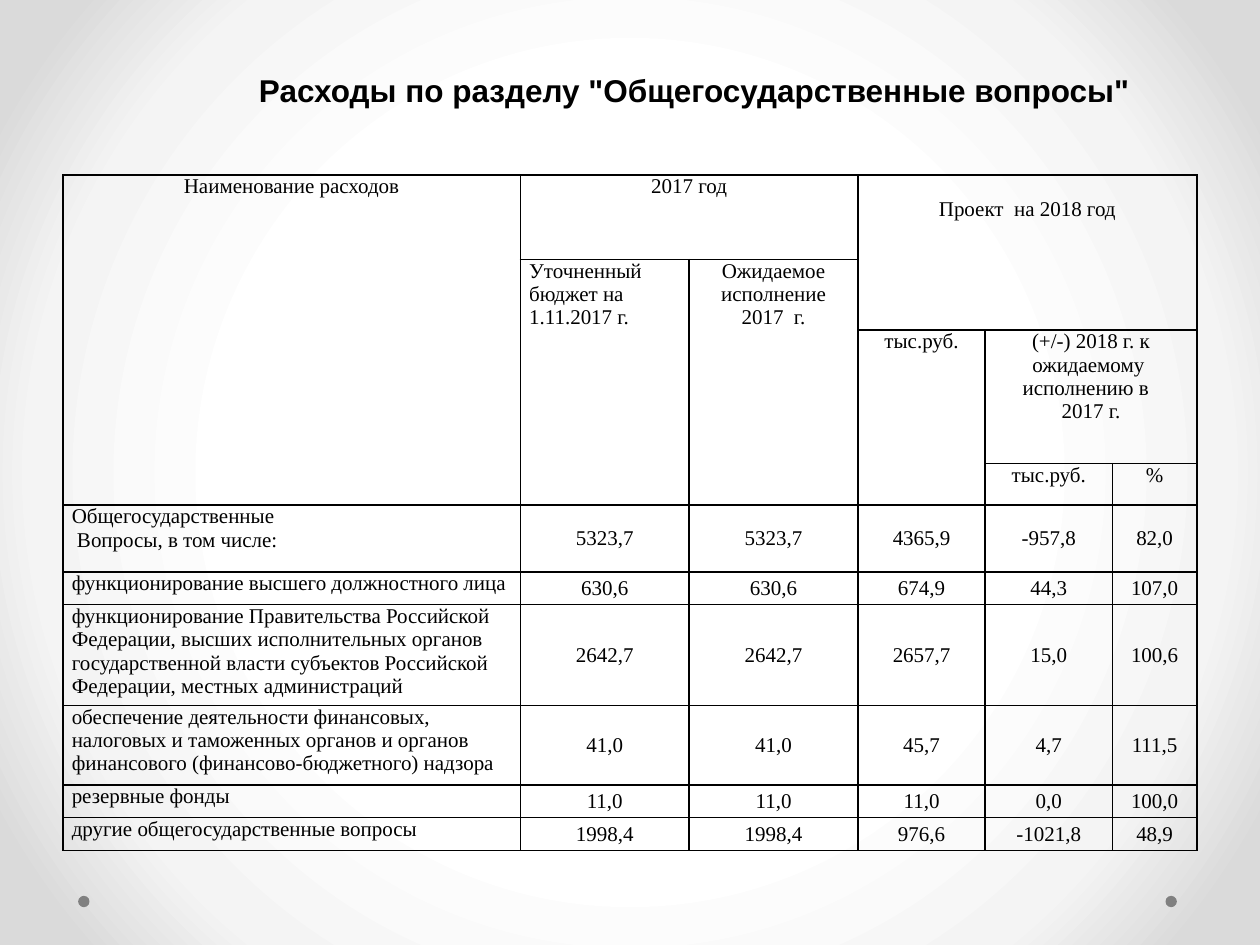
from pptx import Presentation
from pptx.dml.color import RGBColor
from pptx.enum.shapes import MSO_SHAPE
from pptx.enum.text import MSO_ANCHOR, PP_ALIGN
from pptx.oxml import parse_xml
from pptx.oxml.ns import nsdecls, qn
from pptx.util import Inches, Pt

BLACK = "000000"
DOT_GRAY = "808080"
BACKGROUND_STOPS = [(50, "FFFFFF"), (76, "F4F4F4"), (92, "DADADA")]
COLUMN_WIDTHS = [3.63, 1.34, 1.34, 1.01, 1.01, 0.67]
ROW_HEIGHTS = [0.67, 0.56, 1.06, 0.33, 0.53, 0.26, 0.8, 0.63, 0.26, 0.26]

# row, column, row span, column span, paragraphs, alignment, top margin
HEADERS = [
    (0, 0, 4, 1, ["Наименование расходов"], PP_ALIGN.CENTER, 0),
    (0, 1, 1, 2, ["2017 год"], PP_ALIGN.CENTER, 0),
    (0, 3, 2, 3, ["Проект  на 2018 год"], PP_ALIGN.CENTER, 0.18),
    (1, 1, 3, 1, ["Уточненный бюджет на 1.11.2017 г."], PP_ALIGN.LEFT, 0),
    (1, 2, 3, 1, ["Ожидаемое", "исполнение", "2017  г."], PP_ALIGN.CENTER, 0),
    (2, 3, 2, 1, ["тыс.руб."], PP_ALIGN.CENTER, 0),
    (2, 4, 1, 2, ["(+/-) 2018 г. к ожидаемому ", "исполнению в  ", "2017 г."],
     PP_ALIGN.CENTER, 0),
    (3, 4, 1, 1, ["тыс.руб."], PP_ALIGN.CENTER, 0),
    (3, 5, 1, 1, ["%"], PP_ALIGN.CENTER, 0),
]
EXPENSES = [
    (["Общегосударственные", " Вопросы, в том числе:"],
     ["5323,7", "5323,7", "4365,9", "-957,8", "82,0"]),
    (["функционирование высшего должностного лица"],
     ["630,6", "630,6", "674,9", "44,3", "107,0"]),
    (["функционирование Правительства Российской Федерации, высших "
      "исполнительных органов государственной власти субъектов Российской "
      "Федерации, местных администраций"],
     ["2642,7", "2642,7", "2657,7", "15,0", "100,6"]),
    (["обеспечение деятельности финансовых, налоговых и таможенных органов "
      "и органов финансового (финансово-бюджетного) надзора"],
     ["41,0", "41,0", "45,7", "4,7", "111,5"]),
    (["резервные фонды"], ["11,0", "11,0", "11,0", "0,0", "100,0"]),
    (["другие общегосударственные вопросы"],
     ["1998,4", "1998,4", "976,6", "-1021,8", "48,9"]),
]


def color(value):
    """Turn a hex string into a colour."""
    return RGBColor.from_string(value)


def set_background(slide):
    """Fill the slide with a gradient spreading from its centre."""
    slide.background.fill.gradient()
    gradient = slide.element.find(".//" + qn("a:gradFill"))
    stops = "".join(
        f'<a:gs pos="{position * 1000}"><a:srgbClr val="{value}"/></a:gs>'
        for position, value in BACKGROUND_STOPS)
    gradient.getparent().replace(gradient, parse_xml(
        f'<a:gradFill {nsdecls("a")} rotWithShape="1"><a:gsLst>{stops}</a:gsLst>'
        '<a:path path="circle">'
        '<a:fillToRect l="50000" t="50000" r="50000" b="50000"/>'
        '</a:path></a:gradFill>'))


def add_run(paragraph, text, font_name, size, bold=False):
    """Append a black run to a paragraph."""
    run = paragraph.add_run()
    run.text = text
    run.font.name = font_name
    run.font.size = Pt(size)
    run.font.bold = bold
    run.font.color.rgb = color(BLACK)


def add_dot(slide, left):
    """Add a small gray dot near the bottom edge."""
    dot = slide.shapes.add_shape(
        MSO_SHAPE.OVAL, Inches(left), Inches(7.11), Inches(0.09), Inches(0.09))
    dot.shadow.inherit = False
    dot.fill.solid()
    dot.fill.fore_color.rgb = color(DOT_GRAY)
    dot.line.fill.background()


def set_title(slide):
    """Place and write the slide title, centred right of a wide left margin."""
    title = slide.shapes.title
    title.left, title.top = Inches(0.51), Inches(0.29)
    title.width, title.height = Inches(9), Inches(0.63)
    frame = title.text_frame
    frame.word_wrap = True
    frame.vertical_anchor = MSO_ANCHOR.BOTTOM
    frame.margin_left = Inches(1.1)
    frame.margin_bottom = Inches(0.06)
    paragraph = frame.paragraphs[0]
    paragraph.alignment = PP_ALIGN.CENTER
    add_run(paragraph, 'Расходы по разделу "Общегосударственные вопросы"',
            "Arial", 18, bold=True)


def format_cell(cell):
    """Give a cell narrow margins, no fill and thin black borders."""
    cell.margin_left = cell.margin_right = Inches(0.07)
    cell.margin_top = cell.margin_bottom = 0
    cell.fill.background()
    cell.text_frame.paragraphs[0].font.size = Pt(12)
    properties = cell._tc.get_or_add_tcPr()
    for index, side in enumerate(["lnL", "lnR", "lnT", "lnB"]):
        properties.insert(index, parse_xml(
            f'<a:{side} {nsdecls("a")} w="{Pt(1)}"><a:solidFill>'
            f'<a:srgbClr val="{BLACK}"/></a:solidFill></a:{side}>'))


def write_cell(cell, lines, alignment, anchor=MSO_ANCHOR.TOP):
    """Write one paragraph per line into a cell."""
    cell.vertical_anchor = anchor
    frame = cell.text_frame
    for index, line in enumerate(lines):
        paragraph = frame.add_paragraph() if index else frame.paragraphs[0]
        paragraph.alignment = alignment
        add_run(paragraph, line, "Times New Roman", 12)


def add_expense_table(slide):
    """Add the table of expenses with its merged header."""
    table = slide.shapes.add_table(
        len(ROW_HEIGHTS), len(COLUMN_WIDTHS), Inches(0.5), Inches(1.39),
        Inches(sum(COLUMN_WIDTHS)), Inches(sum(ROW_HEIGHTS))).table
    table.first_row = table.horz_banding = False
    for column, width in zip(table.columns, COLUMN_WIDTHS):
        column.width = Inches(width)
    for row, height in zip(table.rows, ROW_HEIGHTS):
        row.height = Inches(height)
    for cell in table.iter_cells():
        format_cell(cell)
    for row, column, height, width, lines, alignment, top in HEADERS:
        cell = table.cell(row, column)
        if height * width > 1:
            cell.merge(table.cell(row + height - 1, column + width - 1))
        cell.margin_top = Inches(top)
        write_cell(cell, lines, alignment)
    for row, (name, values) in enumerate(EXPENSES, start=4):
        write_cell(table.cell(row, 0), name, PP_ALIGN.LEFT)
        for column, value in enumerate(values, start=1):
            write_cell(table.cell(row, column), [value], PP_ALIGN.CENTER,
                       MSO_ANCHOR.MIDDLE)


def main():
    """Build and save the presentation."""
    presentation = Presentation()
    presentation.slide_width = Inches(10)
    presentation.slide_height = Inches(7.5)
    slide = presentation.slides.add_slide(presentation.slide_layouts[5])
    set_background(slide)
    for left in (9.25, 0.62):
        add_dot(slide, left)
    set_title(slide)
    add_expense_table(slide)
    presentation.save("out.pptx")


if __name__ == "__main__":
    main()
